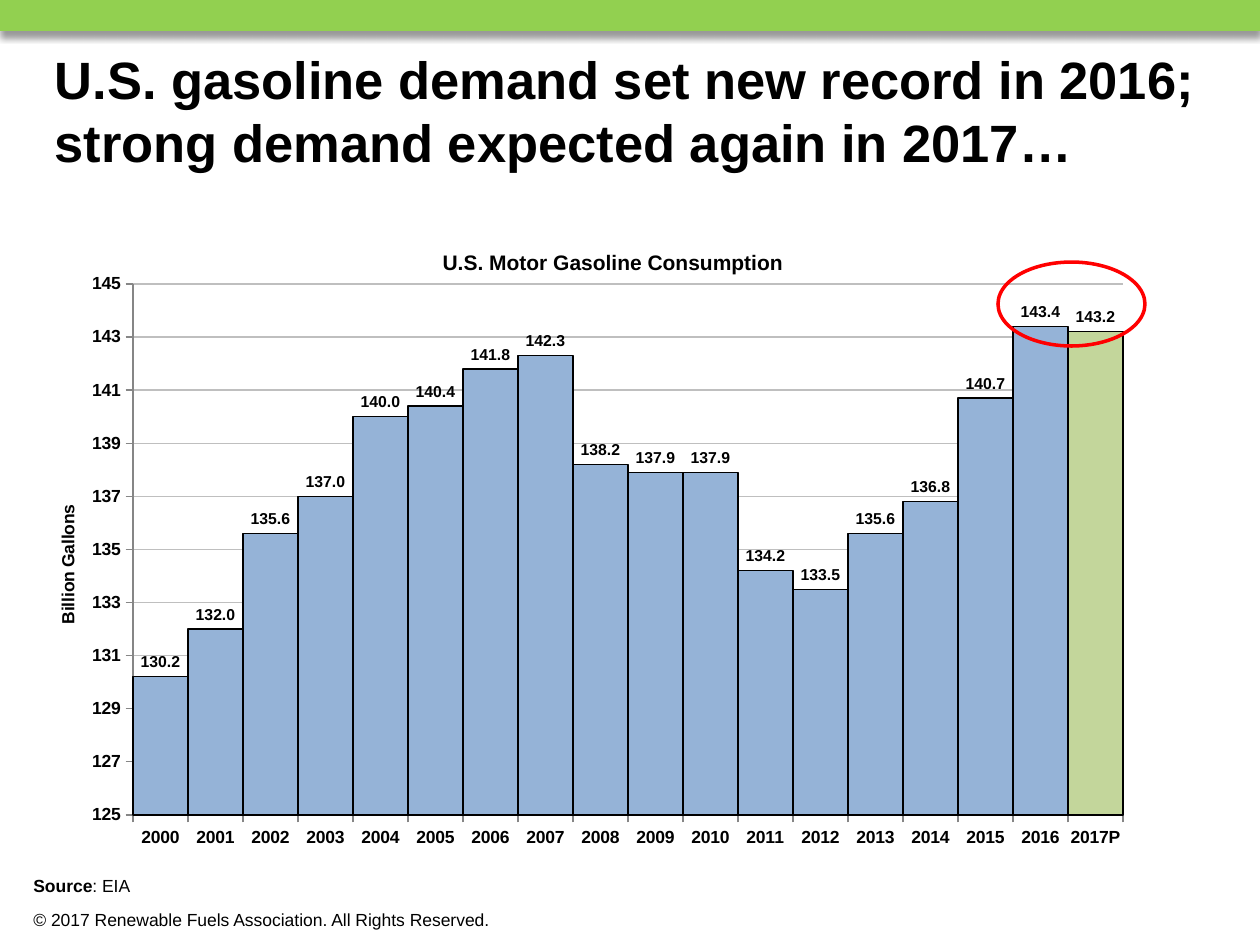
from lxml.etree import SubElement
from pptx import Presentation
from pptx.chart.data import CategoryChartData
from pptx.dml.color import RGBColor
from pptx.enum.chart import XL_CHART_TYPE, XL_LABEL_POSITION, XL_TICK_MARK
from pptx.enum.shapes import MSO_SHAPE
from pptx.enum.text import MSO_ANCHOR, PP_ALIGN
from pptx.oxml import parse_xml
from pptx.oxml.ns import nsdecls, qn
from pptx.util import Pt

SCALE = 914400 / 126  # EMU per px


def px(*lengths):
    return [round(length * SCALE) for length in lengths]


def color(hex_string):
    return RGBColor.from_string(hex_string)


presentation = Presentation()
presentation.slide_width, presentation.slide_height = px(1260, 945)
slide = presentation.slides.add_slide(presentation.slide_layouts[5])

# Green band with a soft shadow along the top
band = slide.shapes.add_shape(MSO_SHAPE.RECTANGLE, *px(0, 0, 1260, 31))
band.fill.solid()
band.fill.fore_color.rgb = color("92D050")
band.line.fill.background()
band.shadow.inherit = False
band._element.spPr.find(qn("a:effectLst")).append(parse_xml(
    f'<a:outerShdw {nsdecls("a")} blurRad="{Pt(4)}" dist="{Pt(3)}" dir="5400000" '
    'rotWithShape="0"><a:srgbClr val="000000"><a:alpha val="40000"/></a:srgbClr>'
    '</a:outerShdw>'))

# Title
title = slide.shapes.title
title.left, title.top, title.width, title.height = px(42, 31, 1176, 158)
title.text_frame.word_wrap = True
title.text_frame.vertical_anchor = MSO_ANCHOR.MIDDLE
paragraph = title.text_frame.paragraphs[0]
paragraph.alignment = PP_ALIGN.LEFT
run = paragraph.add_run()
run.text = "U.S. gasoline demand set new record in 2016; strong demand expected again in 2017…"
run.font.name = "Arial"
run.font.size = Pt(30)
run.font.bold = True
run.font.color.rgb = color("000000")

# Gasoline consumption chart
consumption = {
    "2000": 130.2, "2001": 132.0, "2002": 135.6, "2003": 137.0, "2004": 140.0,
    "2005": 140.4, "2006": 141.8, "2007": 142.3, "2008": 138.2, "2009": 137.9,
    "2010": 137.9, "2011": 134.2, "2012": 133.5, "2013": 135.6, "2014": 136.8,
    "2015": 140.7, "2016": 143.4, "2017P": 143.2,
}
chart_data = CategoryChartData()
chart_data.categories = list(consumption)
chart_data.add_series("Series 1", list(consumption.values()))
chart = slide.shapes.add_chart(
    XL_CHART_TYPE.COLUMN_CLUSTERED, *px(42, 220, 1134, 640), chart_data).chart
chart.has_legend = False
chart.font.name = "Arial"
chart.font.size = Pt(10)
chart.font.color.rgb = color("000000")

# Axes
category_axis, value_axis = chart.category_axis, chart.value_axis
for axis in (category_axis, value_axis):
    axis.major_tick_mark = XL_TICK_MARK.OUTSIDE
    axis.minor_tick_mark = XL_TICK_MARK.NONE
    axis.tick_labels.font.bold = True
    axis.tick_labels.font.size = Pt(10)
    axis.format.line.color.rgb = color("868686")
    axis.format.line.width = Pt(0.75)
value_axis.minimum_scale = 125
value_axis.maximum_scale = 145
value_axis.major_unit = 2
value_axis.tick_labels.number_format = "0"
value_axis.tick_labels.number_format_is_linked = False
value_axis.major_gridlines.format.line.color.rgb = color("BFBFBF")
value_axis.major_gridlines.format.line.width = Pt(0.75)

# Chart and axis titles
chart.has_title = True
value_axis.has_title = True
for heading, text, size in [
    (chart.chart_title, "U.S. Motor Gasoline Consumption", 12),
    (value_axis.axis_title, "Billion Gallons", 10),
]:
    run = heading.text_frame.paragraphs[0].add_run()
    run.text = text
    run.font.name = "Arial"
    run.font.size = Pt(size)
    run.font.bold = True
    run.font.color.rgb = color("000000")

# Fixed places for the plot area and both titles, as fractions of the chart
plot_area = chart._chartSpace.chart.plotArea
for element, index, settings in [
    (plot_area, 0, dict(layoutTarget="inner", xMode="edge", yMode="edge",
                        x=91 / 1134, y=64 / 640, w=990 / 1134, h=531 / 640)),
    (chart.chart_title._element, 1, dict(xMode="edge", yMode="edge", x=0.35, y=0.04)),
    (value_axis.axis_title._element, 1, dict(xMode="edge", yMode="edge", x=0.01, y=0.44)),
]:
    for old_layout in element.findall(qn("c:layout")):
        element.remove(old_layout)
    layout = parse_xml(f'<c:layout {nsdecls("c")}><c:manualLayout/></c:layout>')
    for name, value in settings.items():
        SubElement(layout[0], qn(f"c:{name}")).set("val", str(value))
    element.insert(index, layout)

# Columns, with the projected year in green
plot = chart.plots[0]
plot.gap_width = 0
plot.vary_by_categories = False
series = plot.series[0]
projected = series.points[len(consumption) - 1]
for column, fill in [(series, "95B3D7"), (projected, "C3D69B")]:
    column.format.fill.solid()
    column.format.fill.fore_color.rgb = color(fill)
    column.format.line.color.rgb = color("000000")
    column.format.line.width = Pt(0.75)
labels = series.data_labels
labels.show_value = True
labels.position = XL_LABEL_POSITION.OUTSIDE_END
labels.number_format = "#,##0.0"
labels.number_format_is_linked = False
labels.font.size = Pt(9)
labels.font.bold = True

# Ring around the record years
ring = slide.shapes.add_shape(MSO_SHAPE.OVAL, *px(998, 262, 147, 84))
ring.fill.background()
ring.line.color.rgb = color("FF0000")
ring.line.width = Pt(2)
ring.shadow.inherit = False

# Source and copyright lines
for top, runs in [
    (869, [("Source", True), (": EIA", False)]),
    (903, [("© 2017 Renewable Fuels Association. All Rights Reserved.", False)]),
]:
    note = slide.shapes.add_textbox(*px(21, top, 788, 34))
    note.text_frame.word_wrap = True
    paragraph = note.text_frame.paragraphs[0]
    for text, bold in runs:
        run = paragraph.add_run()
        run.text = text
        run.font.name = "Arial"
        run.font.size = Pt(10)
        run.font.bold = bold
        run.font.color.rgb = color("000000")

presentation.save("out.pptx")
